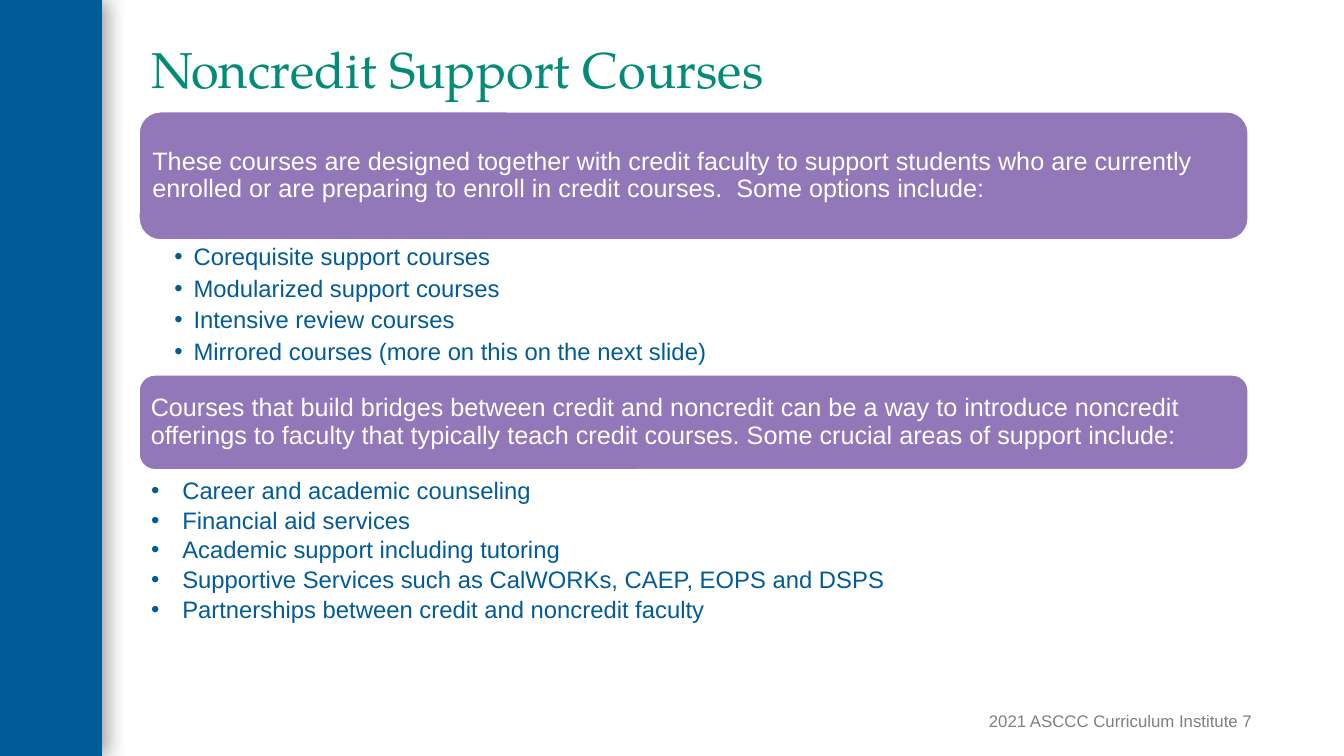
from dataclasses import dataclass

from lxml import etree
from pptx import Presentation
from pptx.dml.color import RGBColor
from pptx.enum.shapes import MSO_SHAPE
from pptx.enum.text import MSO_ANCHOR, PP_ALIGN
from pptx.oxml.ns import qn
from pptx.util import Inches, Pt

RECTANGLE, ROUNDED = MSO_SHAPE.RECTANGLE, MSO_SHAPE.ROUNDED_RECTANGLE
TOP, MIDDLE = MSO_ANCHOR.TOP, MSO_ANCHOR.MIDDLE
LEFT, RIGHT = PP_ALIGN.LEFT, PP_ALIGN.RIGHT

BLUE, GREEN, PURPLE = "005B96", "008C77", "9277B9"
WHITE, GRAY = "FFFFFF", "7F7F7F"
BODY_FONT, TITLE_FONT = "Arial", "TeX Gyre Pagella"
CARD_LEFT, CARD_WIDTH = 1.38, 11


@dataclass
class TextStyle:
    size: float
    color: str
    font: str = BODY_FONT
    align: PP_ALIGN = LEFT
    anchor: MSO_ANCHOR = TOP
    line_spacing: float = 1.0
    space_after: float = 0
    bullet_indent: float = 0
    insets: tuple[float, float, float, float] = (0.1, 0.05, 0.1, 0.05)


@dataclass
class TextBlock:
    at: tuple[float, float, float, float]
    lines: list[str]
    style: TextStyle


@dataclass
class Card:
    top: float
    height: float
    text: str


CARD_STYLE = TextStyle(18, WHITE, anchor=MIDDLE, line_spacing=0.9,
                       insets=(0.07, 0.07, 0.07, 0.07))

CARDS = [
    Card(1.11, 1.27, "These courses are designed together with credit faculty to support "
         "students who are currently enrolled or are preparing to enroll in credit "
         "courses.  Some options include:"),
    Card(3.72, 0.94, "Courses that build bridges between credit and noncredit can be a way to "
         "introduce noncredit offerings to faculty that typically teach credit courses. "
         "Some crucial areas of support include:"),
]

TEXT_BLOCKS = [
    TextBlock((1.4, 0.4, 10.99, 0.95), ["Noncredit Support Courses"],
              TextStyle(36, GREEN, TITLE_FONT, line_spacing=0.9)),
    TextBlock((CARD_LEFT, 2.4, CARD_WIDTH, 1.26),
              ["Corequisite support courses",
               "Modularized support courses",
               "Intensive review courses",
               "Mirrored courses (more on this on the next slide)"],
              TextStyle(17, BLUE, line_spacing=0.9, space_after=4.2, bullet_indent=0.19,
                        insets=(0.35, 0.03, 0.17, 0.03))),
    TextBlock((1.4, 4.66, 11, 1.53),
              ["Career and academic counseling",
               "Financial aid services",
               "Academic support including tutoring",
               "Supportive Services such as CalWORKs, CAEP, EOPS and DSPS",
               "Partnerships between credit and noncredit faculty"],
              TextStyle(17, BLUE, line_spacing=1.04, bullet_indent=0.31)),
    TextBlock((9.55, 6.95, 2.87, 0.4), ["2021 ASCCC Curriculum Institute 7"],
              TextStyle(12, GRAY, align=RIGHT, anchor=MIDDLE, insets=(0.1, 0.05, 0, 0.05))),
]


def rgb(color: str) -> RGBColor:
    return RGBColor.from_string(color)


def add_bullet(paragraph, indent: float) -> None:
    properties = paragraph._p.get_or_add_pPr()
    properties.set("marL", str(Inches(indent)))
    properties.set("indent", str(-Inches(indent)))
    etree.SubElement(properties, qn("a:buFont"), typeface=BODY_FONT)
    etree.SubElement(properties, qn("a:buChar"), char="•")


def write_text(shape, lines: list[str], style: TextStyle) -> None:
    frame = shape.text_frame
    frame.word_wrap = True
    frame.vertical_anchor = style.anchor
    (frame.margin_left, frame.margin_top,
     frame.margin_right, frame.margin_bottom) = map(Inches, style.insets)
    frame.text = "\n".join(lines)
    for paragraph in frame.paragraphs:
        if style.bullet_indent:
            add_bullet(paragraph, style.bullet_indent)
        paragraph.alignment = style.align
        paragraph.line_spacing = style.line_spacing
        paragraph.space_after = Pt(style.space_after)
        paragraph.font.name = style.font
        paragraph.font.size = Pt(style.size)
        paragraph.font.color.rgb = rgb(style.color)


def add_side_band(page) -> None:
    """Draw the left band with a soft shadow to its right."""
    band = page.shapes.add_shape(RECTANGLE, 0, 0, Inches(1.01), Inches(7.5))
    band.fill.solid()
    band.fill.fore_color.rgb = rgb(BLUE)
    band.line.fill.background()
    band.shadow.inherit = False
    effects = band._element.spPr.find(qn("a:effectLst"))
    shadow = etree.SubElement(effects, qn("a:outerShdw"), blurRad=str(Pt(15)),
                              dist=str(Pt(3)), dir="0", algn="l", rotWithShape="0")
    shade = etree.SubElement(shadow, qn("a:srgbClr"), val="000000")
    etree.SubElement(shade, qn("a:alpha"), val="40000")


def add_card(page, card: Card) -> None:
    shape = page.shapes.add_shape(ROUNDED, Inches(CARD_LEFT), Inches(card.top),
                                  Inches(CARD_WIDTH), Inches(card.height))
    shape.shadow.inherit = False
    shape.fill.solid()
    shape.fill.fore_color.rgb = rgb(PURPLE)
    shape.line.color.rgb = rgb(WHITE)
    shape.line.width = Pt(1)
    write_text(shape, [card.text], CARD_STYLE)


def add_text_block(page, block: TextBlock) -> None:
    box = page.shapes.add_textbox(*map(Inches, block.at))
    write_text(box, block.lines, block.style)


def main() -> None:
    deck = Presentation()
    deck.slide_width, deck.slide_height = Inches(13.33), Inches(7.5)
    page = deck.slides.add_slide(deck.slide_layouts[6])
    add_side_band(page)
    for card in CARDS:
        add_card(page, card)
    for block in TEXT_BLOCKS:
        add_text_block(page, block)
    deck.save("out.pptx")


if __name__ == "__main__":
    main()
